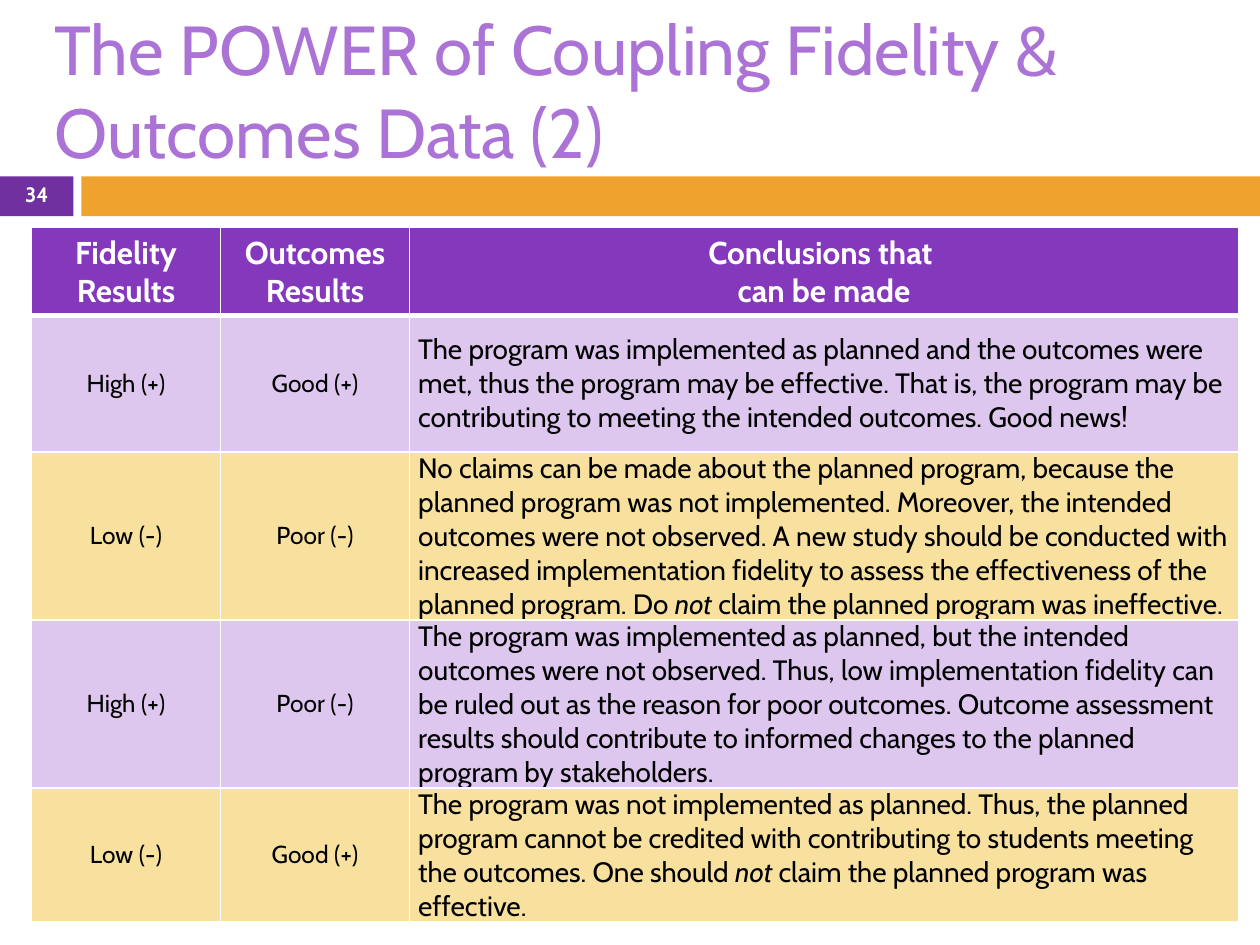
"""Build a slide with a table pairing fidelity and outcome results with conclusions."""
from lxml.etree import SubElement
from pptx import Presentation
from pptx.dml.color import RGBColor as RGB
from pptx.enum.shapes import MSO_SHAPE as Preset
from pptx.enum.text import MSO_ANCHOR as Anchor, PP_ALIGN as Align
from pptx.oxml.ns import qn
from pptx.util import Pt

TITLE = "The POWER of Coupling Fidelity & Outcomes Data (2)"
PAGE_NUMBER = "34"
HEADINGS = ("Fidelity\nResults", "Outcomes Results", "Conclusions that \vcan be made")
FINDINGS = [
    ("High (+)", "Good (+)",
     "The program was implemented as planned and the outcomes were met, thus the program may be "
     "effective. That is, the program may be contributing to meeting the intended outcomes. Good news!"),
    ("Low (-)", "Poor (-)",
     "No claims can be made about the planned program, because the planned program was not "
     "implemented. Moreover, the intended outcomes were not observed. A new study should be "
     "conducted with increased implementation fidelity to assess the effectiveness of the planned "
     "program. Do *not *claim the planned program was ineffective."),
    ("High (+)", "Poor (-)",
     "The program was implemented as planned, but the intended outcomes were not observed. Thus, "
     "low implementation fidelity can be ruled out as the reason for poor outcomes. Outcome "
     "assessment results should contribute to informed changes to the planned program by stakeholders."),
    ("Low (-)", "Good (+)",
     "The program was not implemented as planned. Thus, the planned program cannot be credited with "
     "contributing to students meeting the outcomes. One should *not* claim the planned program "
     "was effective."),
]

THEME = {
    "font": "Cabin",
    "title": "AB73D5", "page": "7030A0", "rule": "F0A22E", "heading": "8439BD",
    "bands": ("DDC7EE", "F8E19F"), "light": "FFFFFF", "dark": "000000",
    "title_size": 39.6, "page_size": 11.9, "heading_size": 18, "rating_size": 14, "conclusion_size": 16,
}
SLIDE_W, SLIDE_H = 720, 540
BAR_TOP, BAR_H = 100.8, 22.8
PAGE_W, RULE_LEFT = 42, 46.5
TABLE_LEFT, TABLE_TOP = 18, 130
COLUMN_WIDTHS = (108, 108, 473.8)
ROW_HEIGHTS = (48.4, 77.8, 77.8, 77.8, 74.2)
THIN, THICK = 1, 3


def write(frame, text, size, color, bold=False, align=Align.LEFT):
    """Fill a frame: newline starts a paragraph, \\v breaks a line, asterisks set italics."""
    frame.word_wrap = True
    for index, words in enumerate(text.split("\n")):
        paragraph = frame.add_paragraph() if index else frame.paragraphs[0]
        paragraph.alignment = align
        for line_index, line in enumerate(words.split("\v")):
            if line_index:
                paragraph.add_line_break()
            for part_index, part in enumerate(line.split("*")):
                run = paragraph.add_run()
                run.text = part
                run.font.name, run.font.size = THEME["font"], Pt(size)
                run.font.bold, run.font.italic = bold, part_index % 2 == 1
                run.font.color.rgb = RGB.from_string(color)


def add_bar(slide, left, width, color):
    """Add a flat strip below the title."""
    bar = slide.shapes.add_shape(Preset.RECTANGLE, Pt(left), Pt(BAR_TOP), Pt(width), Pt(BAR_H))
    bar.shadow.inherit = False
    bar.fill.solid()
    bar.fill.fore_color.rgb = RGB.from_string(color)
    bar.line.fill.background()


def add_label(slide, left, top, width, height, text, **text_format):
    """Add a vertically centred text box."""
    label = slide.shapes.add_textbox(Pt(left), Pt(top), Pt(width), Pt(height))
    label.text_frame.vertical_anchor = Anchor.MIDDLE
    write(label.text_frame, text, **text_format)


def style_cell(cell, fill, top, bottom):
    """Set borders, then fill and anchor of one cell."""
    properties = cell._tc.get_or_add_tcPr()
    for side, weight in (("L", THIN), ("R", THIN), ("T", top), ("B", bottom)):
        border = SubElement(properties, qn(f"a:ln{side}"), w=str(Pt(weight)))
        SubElement(SubElement(border, qn("a:solidFill")), qn("a:srgbClr"), val=THEME["light"])
    cell.fill.solid()
    cell.fill.fore_color.rgb = RGB.from_string(fill)
    cell.vertical_anchor = Anchor.MIDDLE


def add_findings(slide):
    """Add the table of results and conclusions."""
    rows = [HEADINGS, *FINDINGS]
    table = slide.shapes.add_table(
        len(rows), len(HEADINGS), Pt(TABLE_LEFT), Pt(TABLE_TOP),
        Pt(sum(COLUMN_WIDTHS)), Pt(sum(ROW_HEIGHTS))).table
    for column, width in zip(table.columns, COLUMN_WIDTHS):
        column.width = Pt(width)
    for r, texts in enumerate(rows):
        table.rows[r].height = Pt(ROW_HEIGHTS[r])
        heading = r == 0
        fill = THEME["heading"] if heading else THEME["bands"][(r - 1) % 2]
        for c, text in enumerate(texts):
            cell = table.cell(r, c)
            style_cell(cell, fill, THICK if r == 1 else THIN, THICK if heading else THIN)
            conclusion = not heading and c == len(HEADINGS) - 1
            if conclusion:
                cell.margin_left = cell.margin_right = Pt(5)
                cell.margin_top = cell.margin_bottom = Pt(0)
            role = "heading" if heading else "conclusion" if conclusion else "rating"
            write(cell.text_frame, text, size=THEME[f"{role}_size"],
                  color=THEME["light" if heading else "dark"], bold=heading,
                  align=Align.LEFT if conclusion else Align.CENTER)


def main():
    deck = Presentation()
    deck.slide_width, deck.slide_height = Pt(SLIDE_W), Pt(SLIDE_H)
    slide = deck.slides.add_slide(deck.slide_layouts[6])
    add_bar(slide, 0, PAGE_W, THEME["page"])
    add_bar(slide, RULE_LEFT, SLIDE_W - RULE_LEFT, THEME["rule"])
    add_label(slide, 24, 12, 666, 78, TITLE, size=THEME["title_size"], color=THEME["title"])
    add_findings(slide)
    add_label(slide, 0, BAR_TOP - 1, PAGE_W, BAR_H, PAGE_NUMBER, size=THEME["page_size"],
              color=THEME["light"], bold=True, align=Align.CENTER)
    deck.save("out.pptx")


if __name__ == "__main__":
    main()
